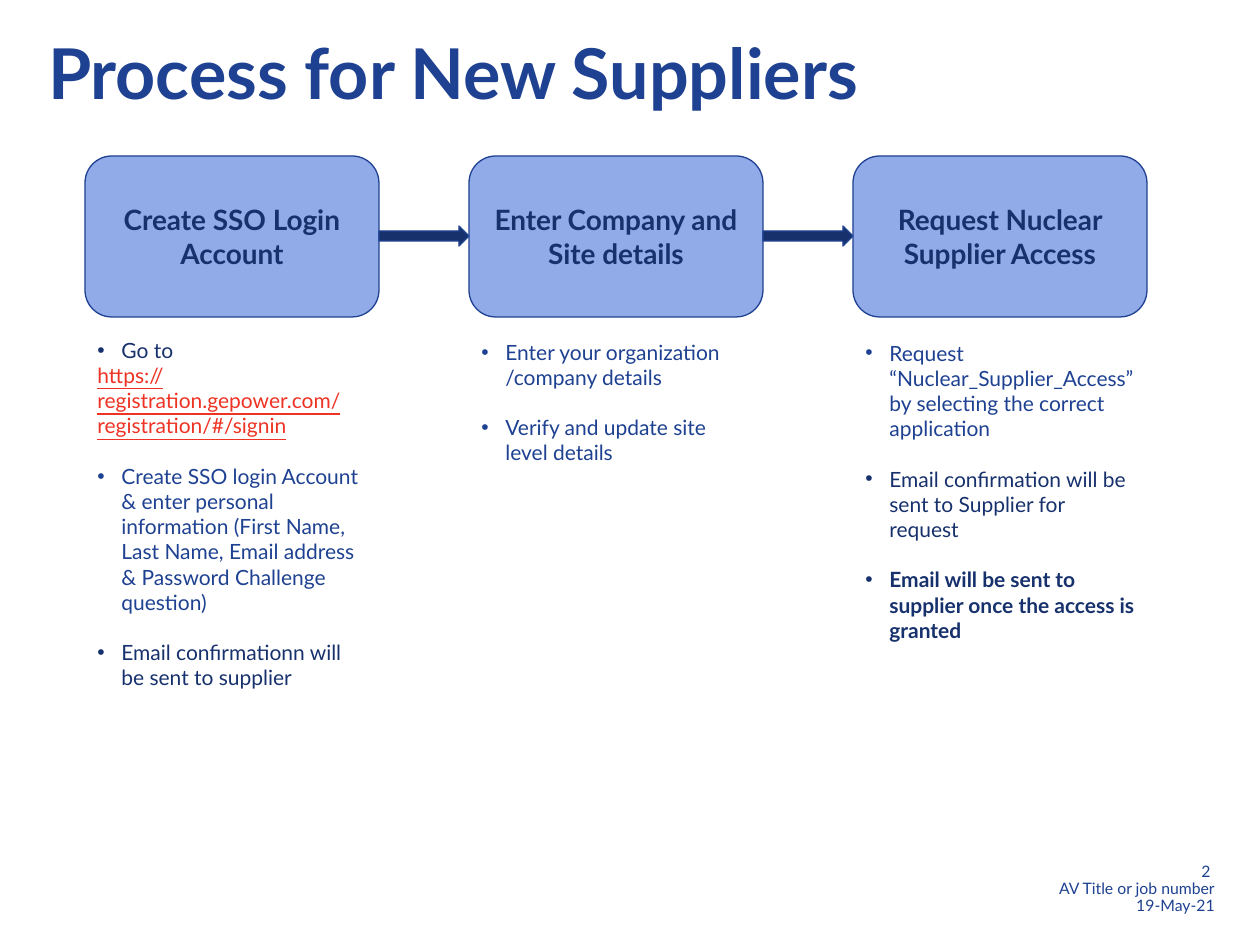
"""Builds the slide showing the onboarding process for new suppliers."""
from dataclasses import dataclass

from lxml.etree import SubElement
from pptx import Presentation
from pptx.dml.color import RGBColor
from pptx.enum.shapes import MSO_SHAPE
from pptx.enum.text import MSO_ANCHOR, MSO_AUTO_SIZE, PP_ALIGN
from pptx.oxml.ns import qn
from pptx.shapes.autoshape import Shape
from pptx.slide import Slide
from pptx.text.text import TextFrame, _Paragraph
from pptx.util import Emu, Pt


@dataclass(frozen=True)
class Theme:
    """Colours, font and type sizes of the slide."""

    blue: RGBColor = RGBColor.from_string("1E4191")
    navy: RGBColor = RGBColor.from_string("17316D")
    sky: RGBColor = RGBColor.from_string("90ABE8")
    red: RGBColor = RGBColor.from_string("EE3324")
    font: str = "Lato"
    title: float = 40
    heading: float = 16
    body: float = 12
    footer: float = 9
    gap: float = 14.4
    outline: float = 0.75


@dataclass(frozen=True)
class Box:
    """A rectangle in whole px."""

    left: int
    top: int
    width: int
    height: int

    def emu(self) -> tuple[Emu, Emu, Emu, Emu]:
        """Return left, top, width and height in EMU."""
        return px(self.left), px(self.top), px(self.width), px(self.height)


@dataclass(frozen=True)
class Item:
    """One paragraph of a step's instructions."""

    text: str
    color: RGBColor
    bold: bool = False
    link: bool = False


@dataclass(frozen=True)
class Step:
    """One step of the process with its instructions."""

    heading: str
    list_top: int
    list_height: int
    items: tuple[Item, ...]


THEME = Theme()
PX_PER_INCH = 126
STEP_LEFT, STEP_TOP, STEP_WIDTH, STEP_HEIGHT = 85, 156, 294, 161
STEP_PITCH = 384
ARROW_HEIGHT = 20
BULLET_INDENT = 24

STEPS = (
    Step("Create SSO Login Account", 331, 344, (
        Item("Go to", THEME.navy),
        Item("https://registration.gepower.com/registration/#/signin", THEME.red, link=True),
        Item("Create SSO login Account & enter personal information (First Name, "
             "Last Name, Email address & Password Challenge question)", THEME.blue),
        Item("Email confirmationn will be sent to supplier", THEME.navy),
    )),
    Step("Enter Company and Site details", 333, 140, (
        Item("Enter your organization /company details", THEME.blue),
        Item("Verify and update site level details", THEME.blue),
    )),
    Step("Request Nuclear Supplier Access", 334, 292, (
        Item("Request “Nuclear_Supplier_Access” by selecting the correct application", THEME.blue),
        Item("Email confirmation will be sent to Supplier for request", THEME.navy),
        Item("Email will be sent to supplier once the access is granted", THEME.navy, bold=True),
    )),
)
FOOTER_LINES = ("2 ", "AV Title or job number", "19-May-21")


def px(length: int) -> Emu:
    """Turn px into EMU."""
    return Emu(round(length * 914400 / PX_PER_INCH))


def add_run(paragraph: _Paragraph, text: str, size: float, color: RGBColor,
            bold: bool = False, underline: bool = False) -> None:
    """Add one formatted run to a paragraph."""
    run = paragraph.add_run()
    run.text = text
    run.font.name = THEME.font
    run.font.size = Pt(size)
    run.font.bold = bold
    run.font.underline = underline
    run.font.color.rgb = color


def next_paragraph(frame: TextFrame, index: int) -> _Paragraph:
    """Return the first paragraph of a frame or add another."""
    return frame.add_paragraph() if index else frame.paragraphs[0]


def clear_insets(frame: TextFrame) -> None:
    """Remove all inner margins and wrap the text."""
    frame.margin_left = frame.margin_top = frame.margin_right = frame.margin_bottom = 0
    frame.word_wrap = True


def add_text_box(slide: Slide, box: Box) -> TextFrame:
    """Add a wrapping text box that grows with its text."""
    frame = slide.shapes.add_textbox(*box.emu()).text_frame
    frame.word_wrap = True
    frame.auto_size = MSO_AUTO_SIZE.SHAPE_TO_FIT_TEXT
    return frame


def add_bullet(paragraph: _Paragraph) -> None:
    """Give a paragraph a hanging bullet."""
    properties = paragraph._p.get_or_add_pPr()
    properties.set("marL", str(px(BULLET_INDENT)))
    properties.set("indent", str(-px(BULLET_INDENT)))
    SubElement(properties, qn("a:buFont")).set("typeface", "Arial")
    SubElement(properties, qn("a:buChar")).set("char", "•")


def add_outlined(slide: Slide, kind: MSO_SHAPE, box: Box, fill: RGBColor) -> Shape:
    """Add a filled preset shape with the common outline."""
    shape = slide.shapes.add_shape(kind, *box.emu())
    shape.shadow.inherit = False
    shape.fill.solid()
    shape.fill.fore_color.rgb = fill
    shape.line.color.rgb = THEME.blue
    shape.line.width = Pt(THEME.outline)
    return shape


def add_title(slide: Slide, text: str) -> None:
    """Place and format the title placeholder."""
    title = slide.shapes.title
    title.left, title.top, title.width, title.height = Box(48, 39, 1165, 137).emu()
    frame = title.text_frame
    clear_insets(frame)
    frame.auto_size = MSO_AUTO_SIZE.NONE
    frame.vertical_anchor = MSO_ANCHOR.TOP
    paragraph = frame.paragraphs[0]
    paragraph.alignment = PP_ALIGN.LEFT
    paragraph.line_spacing = 0.9
    add_run(paragraph, text, THEME.title, THEME.blue, bold=True)


def add_footer(slide: Slide) -> None:
    """Add the page number, job title and date."""
    frame = add_text_box(slide, Box(888, 858, 339, 64))
    for index, line in enumerate(FOOTER_LINES):
        paragraph = next_paragraph(frame, index)
        paragraph.alignment = PP_ALIGN.RIGHT
        paragraph.line_spacing = 0.9
        add_run(paragraph, line, THEME.footer, THEME.blue)


def add_step(slide: Slide, step: Step, left: int) -> None:
    """Add a step's heading box and its instructions."""
    heading_box = Box(left, STEP_TOP, STEP_WIDTH, STEP_HEIGHT)
    heading = add_outlined(slide, MSO_SHAPE.ROUNDED_RECTANGLE, heading_box, THEME.sky).text_frame
    clear_insets(heading)
    heading.vertical_anchor = MSO_ANCHOR.MIDDLE
    heading.paragraphs[0].alignment = PP_ALIGN.CENTER
    add_run(heading.paragraphs[0], step.heading, THEME.heading, THEME.navy, bold=True)

    instructions = add_text_box(slide, Box(left, step.list_top, STEP_WIDTH, step.list_height))
    for index, item in enumerate(step.items):
        paragraph = next_paragraph(instructions, index)
        if not item.link:
            add_bullet(paragraph)
            if index:
                paragraph.space_before = Pt(THEME.gap)
        add_run(paragraph, item.text, THEME.body, item.color, item.bold, item.link)


def main() -> None:
    """Build and save the slide."""
    deck = Presentation()
    deck.slide_width, deck.slide_height = px(1260), px(945)
    slide = deck.slides.add_slide(deck.slide_layouts[5])
    add_footer(slide)
    add_title(slide, "Process for New Suppliers")
    arrow_top = STEP_TOP + (STEP_HEIGHT - ARROW_HEIGHT) // 2
    for index, step in enumerate(STEPS):
        left = STEP_LEFT + index * STEP_PITCH
        add_step(slide, step, left)
        if index < len(STEPS) - 1:
            arrow = Box(left + STEP_WIDTH, arrow_top, STEP_PITCH - STEP_WIDTH, ARROW_HEIGHT)
            add_outlined(slide, MSO_SHAPE.RIGHT_ARROW, arrow, THEME.navy)
    deck.save("out.pptx")


if __name__ == "__main__":
    main()
